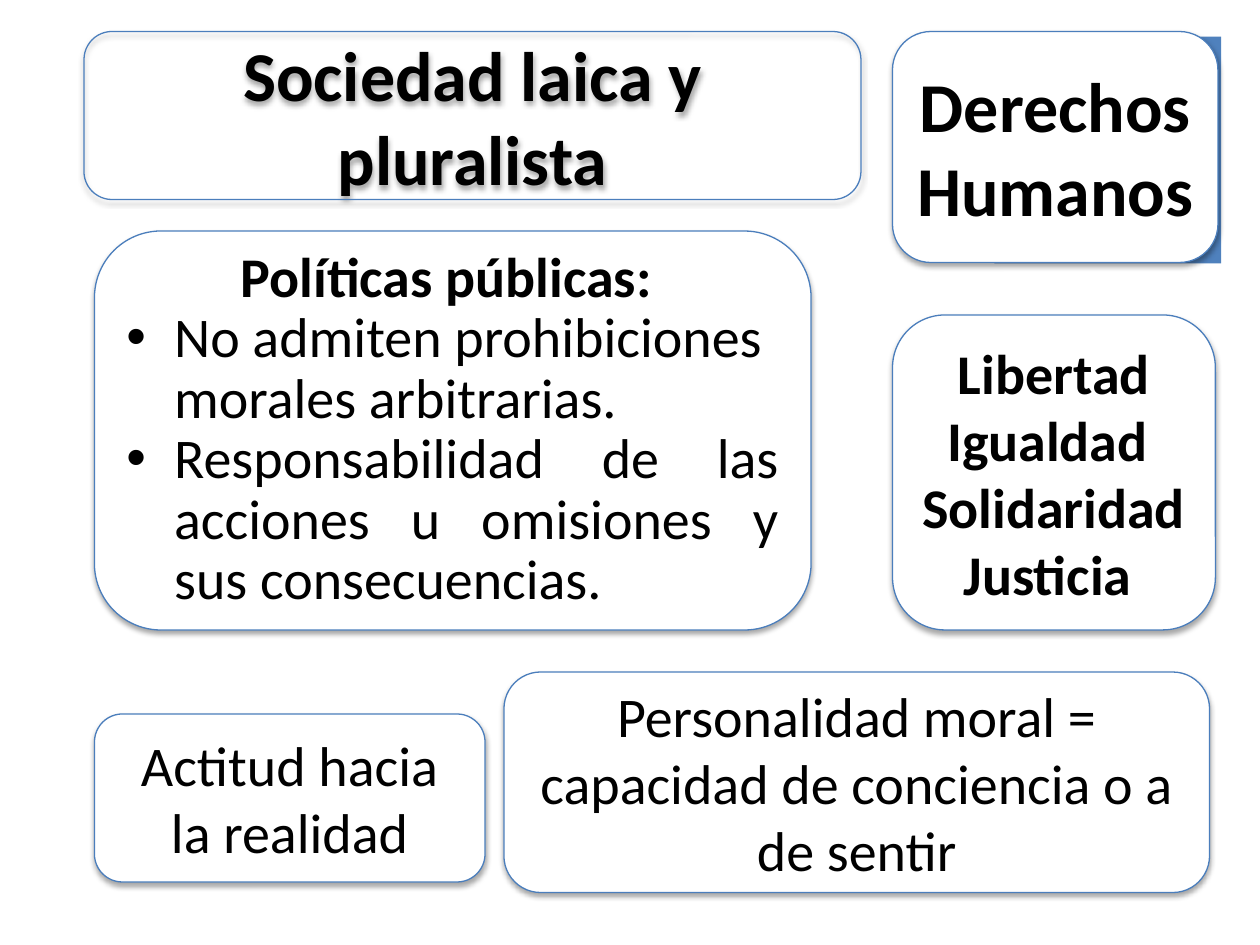
from dataclasses import dataclass

from lxml.etree import SubElement
from pptx import Presentation
from pptx.dml.color import RGBColor
from pptx.enum.shapes import MSO_SHAPE
from pptx.enum.text import MSO_ANCHOR, PP_ALIGN
from pptx.oxml.ns import qn
from pptx.util import Inches, Pt


@dataclass(frozen=True)
class Theme:
    font: str = "Calibri"
    ink: RGBColor = RGBColor.from_string("000000")
    paper: RGBColor = RGBColor.from_string("FFFFFF")
    outline: RGBColor = RGBColor.from_string("4B7EBC")
    accent: RGBColor = RGBColor.from_string("4F81BD")
    heading: Pt = Pt(40)
    body: Pt = Pt(32)
    line: Pt = Pt(0.75)


THEME = Theme()
WIDTH, HEIGHT = Inches(10), Inches(7.5)
COLUMNS, ROWS = 120, 90


def grid(column, row, columns, rows):
    return (
        round(WIDTH * column / COLUMNS),
        round(HEIGHT * row / ROWS),
        round(WIDTH * columns / COLUMNS),
        round(HEIGHT * rows / ROWS),
    )


def add_shadow(shape):
    effects = shape._element.spPr.find(qn("a:effectLst"))
    shadow = SubElement(
        effects, qn("a:outerShdw"), blurRad=str(Pt(3.1)), dist=str(Pt(1.8)),
        dir="5400000", rotWithShape="0",
    )
    color = SubElement(shadow, qn("a:srgbClr"), val=str(THEME.ink))
    SubElement(color, qn("a:alpha"), val="35000")


def add_card(slide, box, filled=True):
    shape = slide.shapes.add_shape(MSO_SHAPE.ROUNDED_RECTANGLE, *box)
    shape.shadow.inherit = False
    add_shadow(shape)
    if filled:
        shape.fill.solid()
        shape.fill.fore_color.rgb = THEME.paper
    else:
        shape.fill.background()
    shape.line.color.rgb = THEME.outline
    shape.line.width = THEME.line
    shape.text_frame.word_wrap = True
    shape.text_frame.vertical_anchor = MSO_ANCHOR.MIDDLE
    return shape.text_frame


def write(frame, lines, size, bold=False, alignment=PP_ALIGN.CENTER):
    frame.text = "\n".join(lines)
    for paragraph in frame.paragraphs:
        paragraph.alignment = alignment
        style(paragraph, size, bold)


def style(paragraph, size, bold):
    paragraph.font.name = THEME.font
    paragraph.font.size = size
    paragraph.font.bold = bold
    paragraph.font.color.rgb = THEME.ink


def add_bullet(paragraph):
    paragraph.level = 1
    properties = paragraph._p.get_or_add_pPr()
    indent = Inches(0.38)
    properties.set("marL", str(indent))
    properties.set("indent", str(-indent))
    SubElement(properties, qn("a:buFont"), typeface="Arial")
    SubElement(properties, qn("a:buChar"), char="•")


def add_corner(slide, box):
    shape = slide.shapes.add_shape(MSO_SHAPE.RECTANGLE, *box)
    shape.shadow.inherit = False
    shape.fill.solid()
    shape.fill.fore_color.rgb = THEME.accent
    shape.line.fill.background()


def add_policies(slide, box):
    frame = add_card(slide, box)
    frame.text = "\n".join([
        "Políticas públicas: ",
        "No admiten prohibiciones morales arbitrarias.",
        "Responsabilidad de las acciones u omisiones y sus consecuencias. ",
    ])
    alignments = (PP_ALIGN.CENTER, PP_ALIGN.LEFT, PP_ALIGN.JUSTIFY)
    for index, paragraph in enumerate(frame.paragraphs):
        paragraph.alignment = alignments[index]
        paragraph.line_spacing = 0.9
        if index:
            add_bullet(paragraph)
        style(paragraph, THEME.body, index == 0)


def add_rights(slide, box):
    write(add_card(slide, box), ["Derechos Humanos"], THEME.heading, bold=True)


def add_values(slide, box):
    values = ["Libertad", "Igualdad ", "Solidaridad ", "Justicia "]
    write(add_card(slide, box), values, THEME.body, bold=True)


def add_title(slide, box):
    frame = add_card(slide, box, filled=False)
    write(frame, ["Sociedad laica y pluralista"], THEME.heading, bold=True)


def add_attitude(slide, box):
    write(add_card(slide, box), ["Actitud hacia la realidad"], THEME.body)


def add_personality(slide, box):
    text = "Personalidad moral = capacidad de conciencia o a de sentir"
    write(add_card(slide, box), [text], THEME.body)


def main():
    presentation = Presentation()
    presentation.slide_width, presentation.slide_height = WIDTH, HEIGHT
    slide = presentation.slides.add_slide(presentation.slide_layouts[6])
    add_corner(slide, grid(94.7, 3.5, 21.6, 21.6))
    add_policies(slide, grid(9, 22, 68.25, 38))
    add_rights(slide, grid(85, 3, 31, 22))
    add_values(slide, grid(85, 30, 30.75, 30))
    add_title(slide, grid(8, 3, 74, 16))
    add_attitude(slide, grid(9, 68, 37.2, 16))
    add_personality(slide, grid(48, 64, 67.2, 21))
    presentation.save("out.pptx")


if __name__ == "__main__":
    main()
